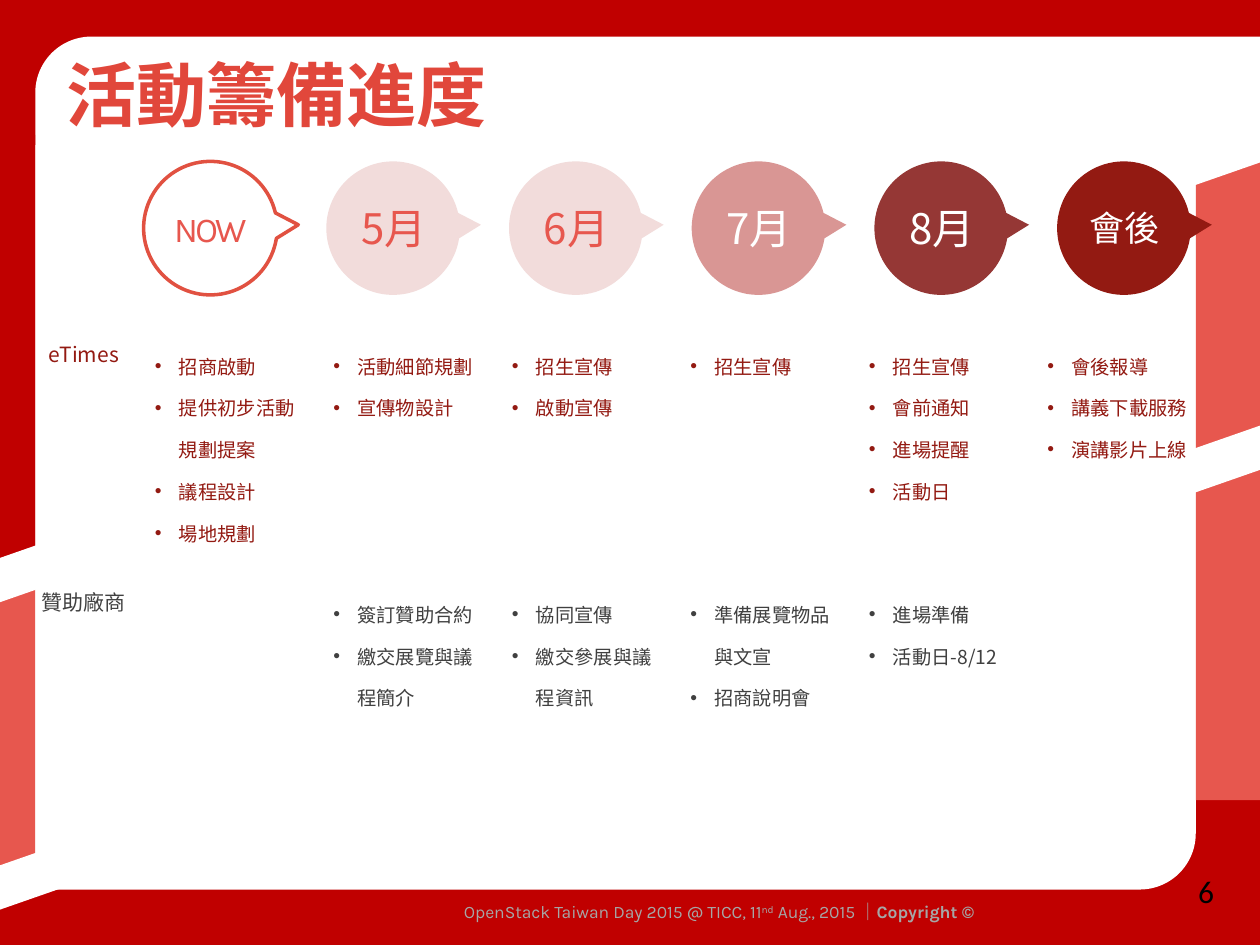
from pptx import Presentation
from pptx.dml.color import RGBColor
from pptx.enum.shapes import MSO_SHAPE
from pptx.enum.text import MSO_ANCHOR, PP_ALIGN
from pptx.oxml.ns import qn
from pptx.util import Inches, Pt
from lxml.etree import SubElement

CJK = "Noto Sans CJK SC"
RED, CORAL, WHITE, MAROON = "C00000", "E7574E", "FFFFFF", "931A12"

PANELS = [
    (MSO_SHAPE.RECTANGLE, (0, 0, 10, 1.15), RED, ()),
    (MSO_SHAPE.ROUND_2_DIAG_RECTANGLE, (0.28, 0.29, 9.72, 5.12), WHITE, (0.087, 0)),
    (MSO_SHAPE.RECTANGLE, (0, 6.35, 10, 1.15), RED, ()),
    (MSO_SHAPE.ROUND_2_DIAG_RECTANGLE, (0, 1.94, 9.49, 5.12), WHITE, (0.087, 0)),
    (MSO_SHAPE.RECTANGLE, (0, 1.15, 0.28, 5.91), CORAL, ()),
    (MSO_SHAPE.RECTANGLE, (0, 1.07, 0.28, 3.39), RED, ()),
    (MSO_SHAPE.RECTANGLE, (9.49, 1.15, 0.51, 5.2), CORAL, ()),
    (MSO_SHAPE.DIAGONAL_STRIPE, (0, 3.36, 11.06, 3.86), WHITE, (0.909,)),
    (MSO_SHAPE.DIAGONAL_STRIPE, (0, 0.92, 11.06, 3.86), WHITE, (0.909,)),
]

# label, fill, text colour, size
STAGES = [
    ("NOW", None, CORAL, 20),
    ("5月", "F2DCDB", CORAL, 24),
    ("6月", "F2DCDB", CORAL, 24),
    ("7月", "D99694", WHITE, 24),
    ("8月", "953735", WHITE, 24),
    ("會後", MAROON, WHITE, 20),
]

# owner, text colour, row height, tasks for each stage
TASKS = [
    ("eTimes", MAROON, 1.97, [
        ["招商啟動", "提供初步活動規劃提案", "議程設計", "場地規劃"],
        ["活動細節規劃", "宣傳物設計"],
        ["招生宣傳", "啟動宣傳"],
        ["招生宣傳"],
        ["招生宣傳", "會前通知", "進場提醒", "活動日"],
        ["會後報導", "講義下載服務", "演講影片上線"],
    ]),
    ("贊助廠商", "404040", 1.42, [
        [],
        ["簽訂贊助合約", "繳交展覽與議程簡介"],
        ["協同宣傳", "繳交參展與議程資訊"],
        ["準備展覽物品與文宣", "招商說明會"],
        ["進場準備", "活動日-8/12"],
        [],
    ]),
]


def rgb(color):
    return RGBColor.from_string(color)


def add_run(p, text, size=11, color="000000", font=CJK, bold=False, spacing=None, baseline=None):
    r = p.add_run()
    r.text = text
    r.font.size, r.font.bold, r.font.name = Pt(size), bold, font
    r.font.color.rgb = rgb(color)
    rPr = r.font._element
    SubElement(rPr, qn("a:ea")).set("typeface", CJK)
    if spacing is not None:
        rPr.set("spc", str(int(spacing * 100)))
    if baseline is not None:
        rPr.set("baseline", str(baseline * 1000))


def add_text(s, box, text="", align=PP_ALIGN.LEFT, anchor=MSO_ANCHOR.MIDDLE, **fmt):
    tf = s.shapes.add_textbox(*map(Inches, box)).text_frame
    tf.word_wrap, tf.vertical_anchor = True, anchor
    p = tf.paragraphs[0]
    p.alignment = align
    if text:
        add_run(p, text, **fmt)
    return p


def add_shape(s, kind, box, fill=None, line=None, adjustments=(), rotation=0):
    sp = s.shapes.add_shape(kind, *map(Inches, box))
    sp.shadow.inherit = False
    sp.rotation = rotation
    for i, value in enumerate(adjustments):
        sp.adjustments[i] = value
    if fill:
        sp.fill.solid()
        sp.fill.fore_color.rgb = rgb(fill)
    else:
        sp.fill.background()
    if line:
        sp.line.color.rgb = rgb(line)
        sp.line.width = Pt(2)
    else:
        sp.line.fill.background()


def add_footer(s):
    p = add_text(s, (2.32, 7.1, 5.51, 0.27), align=PP_ALIGN.RIGHT)
    fmt = dict(size=10, color="A6A6A6", font="Karla")
    add_run(p, "OpenStack Taiwan Day 2015 @ TICC, 11", **fmt)
    add_run(p, "nd", baseline=30, **fmt)
    add_run(p, " Aug., 2015 ｜", **fmt)
    add_run(p, "Copyright ©", bold=True, **fmt)


def add_stage(s, i, label, fill, color, size):
    left = 1.14 + 1.45 * i
    add_shape(s, MSO_SHAPE.OVAL_CALLOUT, (left, 1.28, 1.06, 1.06), fill,
              line=None if fill else "E15141", rotation=249.4)
    if label.isascii():
        # A whole word needs the full circle to stay on one line
        box, style = (left, 1.43, 1.06, 0.77), dict(font="Karla", spacing=-1.6)
    else:
        box, style = (left + 0.15, 1.42, 0.77, 0.77), dict(font=CJK)
    add_text(s, box, label, align=PP_ALIGN.CENTER, size=size, color=color, **style)


def add_bullets(tf, items, color):
    for i, item in enumerate(items):
        p = tf.add_paragraph() if i else tf.paragraphs[0]
        p.line_spacing = 1.5
        pPr = p._p.get_or_add_pPr()
        pPr.set("marL", str(Inches(0.19)))
        pPr.set("indent", str(-Inches(0.19)))
        SubElement(pPr, qn("a:buFont")).set("typeface", "Arial")
        SubElement(pPr, qn("a:buChar")).set("char", "•")
        add_run(p, item, color=color)


def add_task_table(s):
    width, owner_width = 9.43, 0.93
    box = (0.2, 2.63, width, 3.39)
    table = s.shapes.add_table(len(TASKS), len(STAGES) + 1, *map(Inches, box)).table
    table.first_row = table.horz_banding = False
    no_style_no_grid = "{2D5ABB26-0587-4C30-8999-92F81FD0307C}"
    table._tbl.tblPr.find(qn("a:tableStyleId")).text = no_style_no_grid
    stage_width = (width - owner_width) / len(STAGES)
    for i, column in enumerate(table.columns):
        column.width = Inches(stage_width if i else owner_width)
    for row, (owner, color, height, stages) in zip(table.rows, TASKS):
        row.height = Inches(height)
        for cell in row.cells:
            cell.fill.background()
        p = row.cells[0].text_frame.paragraphs[0]
        p.alignment = PP_ALIGN.CENTER
        add_run(p, owner, size=12, color=color)
        for i, items in enumerate(stages, 1):
            add_bullets(row.cells[i].text_frame, items, color)


def main():
    prs = Presentation()
    prs.slide_width, prs.slide_height = Inches(10), Inches(7.5)
    s = prs.slides.add_slide(prs.slide_layouts[6])
    for kind, box, fill, adjustments in PANELS:
        add_shape(s, kind, box, fill, adjustments=adjustments)
    add_footer(s)
    add_text(s, (0.43, 0.29, 8.08, 0.9), "活動籌備進度",
             size=40, color="E1473B", font="Karla", bold=True)
    add_task_table(s)
    add_text(s, (9.41, 6.87, 0.59, 0.5), "6", anchor=MSO_ANCHOR.TOP, size=18, font="Calibri")
    for i, stage in enumerate(STAGES):
        add_stage(s, i, *stage)
    prs.save("out.pptx")


if __name__ == "__main__":
    main()
